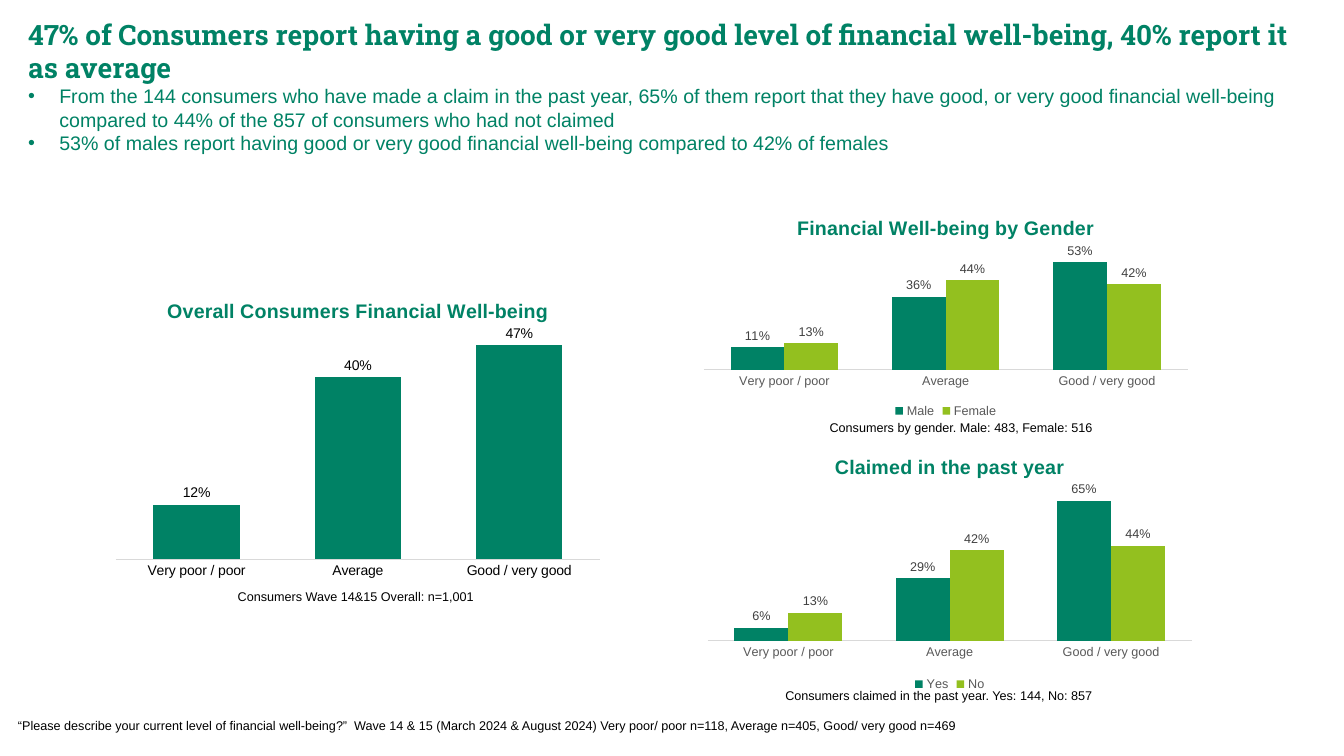
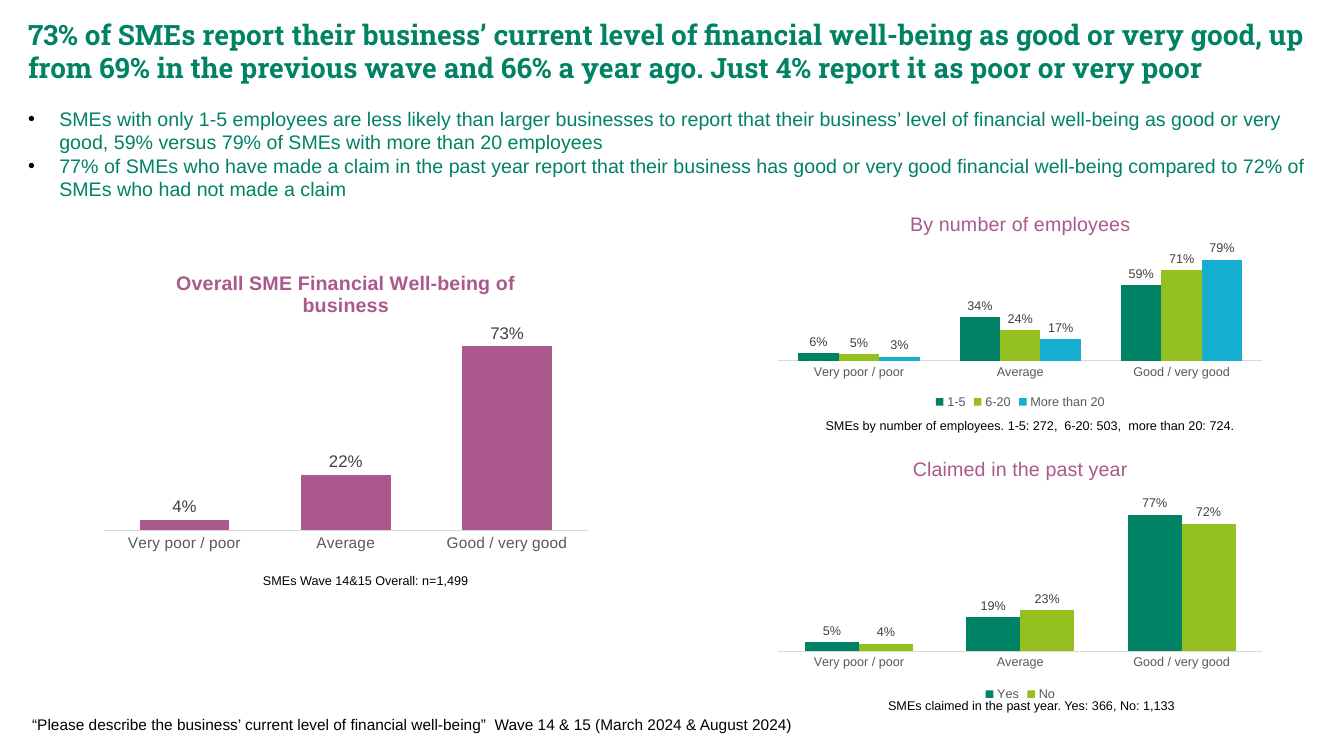
"""Build two slides on the financial well-being of consumers and SMEs."""
from dataclasses import dataclass

from lxml import etree
from pptx import Presentation, util as u
from pptx.chart.data import CategoryChartData
from pptx.dml.color import RGBColor
from pptx.enum import chart as ch, text as tx
from pptx.oxml.ns import qn

PX = 9144
GREEN, LIME, BLUE, PLUM = "008265", "93C01F", "15ADD0", "AB588C"
BLACK, GREY, DARK, PALE = "000000", "595959", "404040", "D9D9D9"
SANS, SLAB = "Arial", "Roboto Slab"
CATS = ("Very poor / poor", "Average", "Good / very good")
INSET, SPAN = 10, 480


@dataclass
class Note:
    """A line of small print."""
    text: str
    x: int
    y: int
    w: int
    size: int = 9


@dataclass
class Series:
    """One set of columns."""
    name: str
    vals: tuple
    fill: str


@dataclass
class Graph:
    """A column chart with the top and foot of its plot."""
    title: str
    x: int
    y: int
    h: int
    top: int
    foot: int
    peak: float
    gap: int
    sets: list
    hue: str
    bold: bool = True
    lap: int = 0
    size: int = 9
    ink: str = GREY
    tag: int = 9
    mark: str = DARK


@dataclass
class Page:
    """All that one slide shows."""
    title: str
    points: list
    dot: str
    lead: int
    width: int
    height: int
    notes: list
    graphs: list


PAGES = [
    Page(
        "47% of Consumers report having a good or very good level of financial well-being, "
        "40% report it as average",
        ["From the 144 consumers who have made a claim in the past year, 65% of them report that "
         "they have good, or very good financial well-being compared to 44% of the 857 of "
         "consumers who had not claimed",
         "53% of males report having good or very good financial well-being compared to "
         "42% of females"],
        GREEN, 0, 1304, 148,
        [Note("“Please describe your current level of financial well-being?”  Wave 14 & 15 "
              "(March 2024 & August 2024) Very poor/ poor n=118, Average n=405, "
              "Good/ very good n=469", 8, 707, 1228),
         Note("Consumers Wave 14&15 Overall: n=1,001", 226, 579, 443),
         Note("Consumers by gender. Male: 483, Female: 516", 813, 412, 443),
         Note("Consumers claimed in the past year. Yes: 144, No: 857", 769, 678, 345)],
        [Graph("Overall Consumers Financial Well-being", 105, 281, 300, 329, 555, 0.5, 87,
               [Series("Series 1", (0.12, 0.4, 0.47), GREEN)],
               GREEN, lap=-27, size=10, ink=BLACK, tag=10, mark=BLACK),
         Graph("Financial Well-being by Gender", 688, 200, 219, 246, 367, 0.6, 100,
               [Series("Male", (0.11, 0.36, 0.53), GREEN),
                Series("Female", (0.13, 0.44, 0.42), LIME)], GREEN),
         Graph("Claimed in the past year", 692, 437, 253, 486, 636, 0.7, 99,
               [Series("Yes", (0.06, 0.29, 0.65), GREEN),
                Series("No", (0.13, 0.42, 0.44), LIME)], GREEN)]),
    Page(
        "73% of SMEs report their business’ current level of financial well-being as good or "
        "very good, up from 69% in the previous wave and 66% a year ago. Just 4% report it as "
        "poor or very poor",
        ["SMEs with only 1-5 employees are less likely than larger businesses to report that "
         "their business’ level of financial well-being as good or very good, 59% versus 79% of "
         "SMEs with more than 20 employees",
         "77% of SMEs who have made a claim in the past year report that their business has good "
         "or very good financial well-being compared to 72% of SMEs who had not made a claim"],
        BLACK, 16, 1288, 195,
        [Note("“Please describe the business’ current level of financial well-being”  "
              "Wave 14 & 15 (March 2024 & August 2024)", 22, 705, 1228, 11),
         Note("SMEs claimed in the past year. Yes: 366, No: 1,133", 871, 687, 321),
         Note("SMEs by number of employees. 1-5: 272,  6-20: 503,  more than 20: 724.",
              809, 410, 443),
         Note("SMEs Wave 14&15 Overall: n=1,499", 251, 563, 443)],
        [Graph("Overall SME Financial Well-being of business", 93, 253, 300, 326, 526, 0.8, 80,
               [Series("Series 1", (0.04, 0.22, 0.73), PLUM)],
               PLUM, lap=-27, size=11, tag=12),
         Graph("By number of employees", 762, 197, 213, 244, 358, 0.9, 99,
               [Series("1-5", (0.06, 0.34, 0.59), GREEN),
                Series("6-20", (0.05, 0.24, 0.71), LIME),
                Series("More than 20", (0.03, 0.17, 0.79), BLUE)], PLUM, bold=False),
         Graph("Claimed in the past year", 762, 439, 261, 488, 646, 0.9, 99,
               [Series("Yes", (0.05, 0.19, 0.77), GREEN),
                Series("No", (0.04, 0.23, 0.72), LIME)], PLUM, bold=False)]),
]


def px(*vals: int) -> list:
    """Turn px into EMU."""
    return [u.Emu(v * PX) for v in vals]


def rgb(code: str) -> RGBColor:
    """Turn a hex string into a colour."""
    return RGBColor.from_string(code)


def style(font, size: int, hue: str, bold: bool = False, face: str = SANS) -> None:
    """Set the look of a font."""
    font.size, font.bold, font.name = u.Pt(size), bold, face
    font.color.rgb = rgb(hue)


def write(para, words: str, size: int, hue: str, bold: bool = False, face: str = SANS) -> None:
    """Add one run to a paragraph."""
    run = para.add_run()
    run.text = words
    style(run.font, size, hue, bold, face)


def frame(slide, x: int, y: int, w: int, h: int):
    """Add a wrapping text box and return its frame."""
    body = slide.shapes.add_textbox(*px(x, y, w, h)).text_frame
    body.word_wrap = True
    body.auto_size = tx.MSO_AUTO_SIZE.SHAPE_TO_FIT_TEXT
    return body


def bullet(para, hue: str) -> None:
    """Give a paragraph a hanging dot."""
    props = para._p.get_or_add_pPr()
    props.set("marL", str(31 * PX))
    props.set("indent", str(-31 * PX))
    tint = etree.SubElement(props, qn("a:buClr"))
    etree.SubElement(tint, qn("a:srgbClr")).set("val", hue)
    etree.SubElement(props, qn("a:buFont")).set("typeface", SANS)
    etree.SubElement(props, qn("a:buChar")).set("char", "•")


def head(slide, page: Page) -> None:
    """Draw the title and its points."""
    body = frame(slide, 18, 12, page.width, page.height)
    write(body.paragraphs[0], page.title, 20, GREEN, True, SLAB)
    for i, words in enumerate(page.points):
        para = body.add_paragraph()
        bullet(para, page.dot)
        if i == 0 and page.lead:
            para.space_before = u.Pt(page.lead)
        write(para, words, 14, GREEN)


def place(chart, graph: Graph) -> None:
    """Fix the inner plot area of a chart."""
    area = chart.element.find(".//" + qn("c:plotArea"))
    for old in area.findall(qn("c:layout")):
        area.remove(old)
    layout = etree.Element(qn("c:layout"))
    area.insert(0, layout)
    manual = etree.SubElement(layout, qn("c:manualLayout"))
    rules = {"layoutTarget": "inner", "xMode": "edge", "yMode": "edge",
             "x": INSET / 500, "y": (graph.top - graph.y) / graph.h,
             "w": SPAN / 500, "h": (graph.foot - graph.top) / graph.h}
    for key, val in rules.items():
        etree.SubElement(manual, qn("c:" + key)).set("val", str(val))


def plot(slide, graph: Graph) -> None:
    """Draw a column chart."""
    data = CategoryChartData(number_format="0%")
    data.categories = CATS
    for item in graph.sets:
        data.add_series(item.name, item.vals)
    chart = slide.shapes.add_chart(ch.XL_CHART_TYPE.COLUMN_CLUSTERED,
                                   *px(graph.x, graph.y, 500, graph.h), data).chart
    style(chart.font, 10, BLACK)
    chart.has_title = True
    write(chart.chart_title.text_frame.paragraphs[0], graph.title, 14, graph.hue, graph.bold)
    chart.chart_title.include_in_layout = False
    chart.has_legend = len(graph.sets) > 1
    if chart.has_legend:
        chart.legend.position = ch.XL_LEGEND_POSITION.BOTTOM
        chart.legend.include_in_layout = False
        style(chart.legend.font, 9, GREY)
    axis = chart.category_axis
    axis.major_tick_mark = ch.XL_TICK_MARK.NONE
    axis.format.line.color.rgb = rgb(PALE)
    axis.format.line.width = u.Pt(0.75)
    style(axis.tick_labels.font, graph.size, graph.ink)
    scale = chart.value_axis
    scale.has_major_gridlines = scale.visible = False
    scale.minimum_scale, scale.maximum_scale = 0, graph.peak
    bars = chart.plots[0]
    bars.vary_by_categories = False
    bars.gap_width, bars.overlap = graph.gap, graph.lap
    for item, cols in zip(graph.sets, bars.series):
        cols.format.fill.solid()
        cols.format.fill.fore_color.rgb = rgb(item.fill)
        tags = cols.data_labels
        tags.show_value = True
        tags.number_format, tags.number_format_is_linked = "0%", False
        tags.position = ch.XL_LABEL_POSITION.OUTSIDE_END
        style(tags.font, graph.tag, graph.mark)
    place(chart, graph)


def main() -> None:
    """Build and save the deck."""
    deck = Presentation()
    deck.slide_width, deck.slide_height = px(1333, 750)
    for page in PAGES:
        slide = deck.slides.add_slide(deck.slide_layouts[6])
        for note in page.notes:
            body = frame(slide, note.x, note.y, note.w, 25)
            write(body.paragraphs[0], note.text, note.size, BLACK)
        head(slide, page)
        for graph in page.graphs:
            plot(slide, graph)
    deck.save("out.pptx")


if __name__ == "__main__":
    main()
